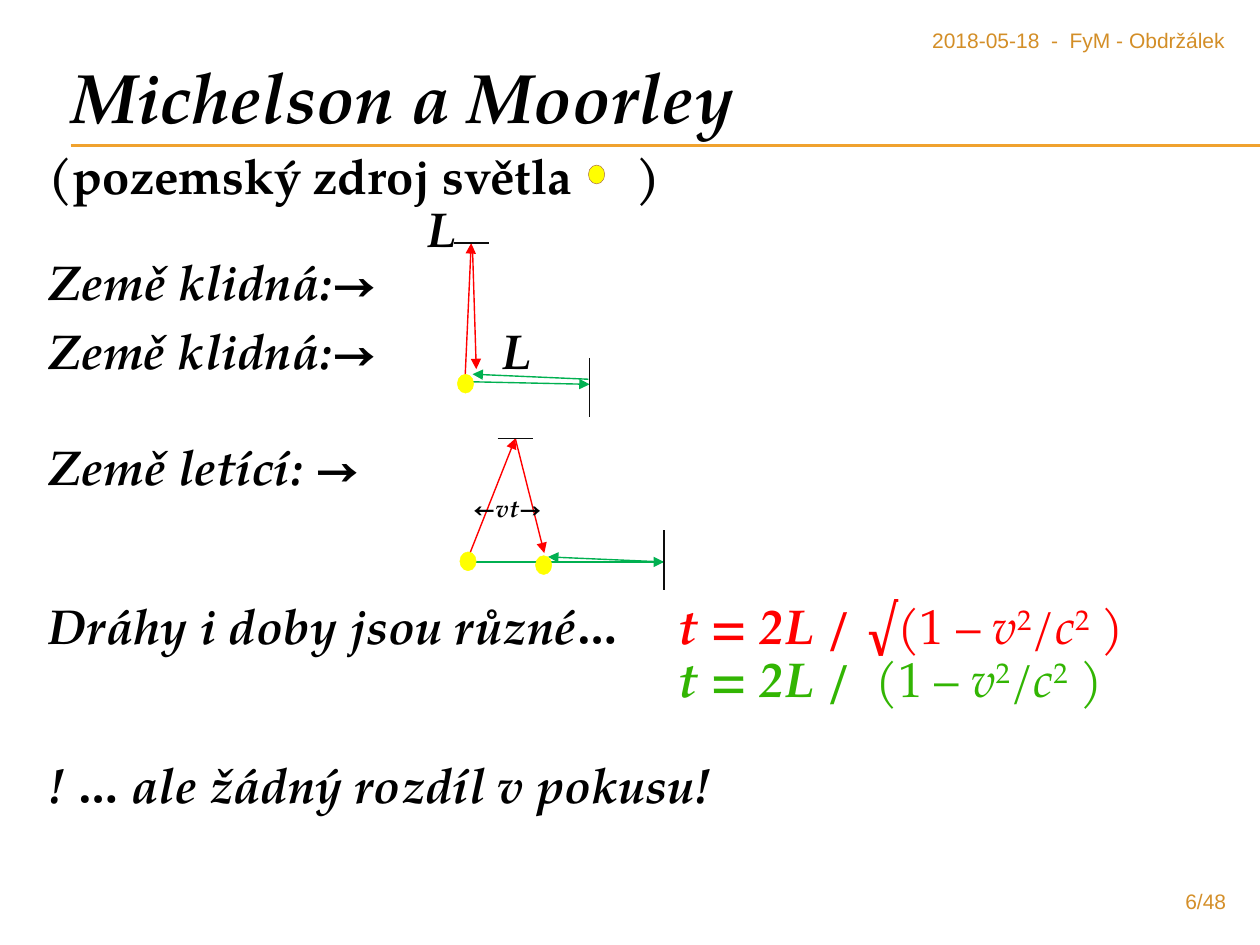
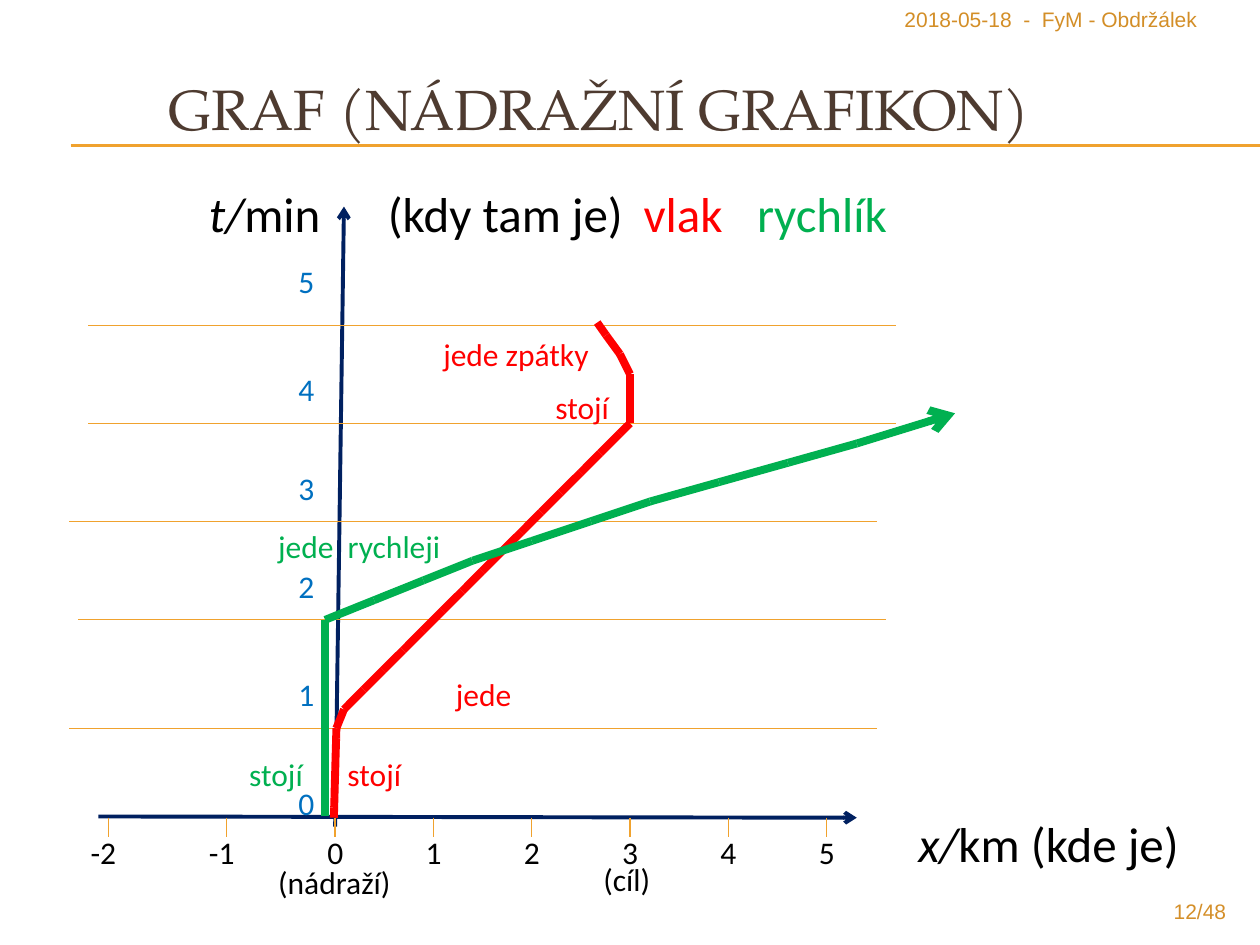
from dataclasses import dataclass

from lxml import etree
from pptx import Presentation
from pptx.dml.color import RGBColor
from pptx.enum import shapes, text
from pptx.oxml import ns
from pptx.util import Inches, Pt


@dataclass(frozen=True)
class Theme:
    serif: str = "TeX Gyre Pagella"
    sans: str = "Calibri"
    small: str = "Arial"
    black: str = "000000"
    mirror: str = "0D0D0D"
    red: str = "FF0000"
    green: str = "00B050"
    lime: str = "32B503"
    yellow: str = "FFFF00"
    brown: str = "A5644E"
    gold: str = "F0A22E"
    date: str = "D38E27"
    page: str = "D48F29"
    head: str = "4E3B30"
    navy: str = "002060"
    blue: str = "0070C0"
    title: float = 40
    caps: float = 32.4
    body: float = 28
    label: float = 18
    note: float = 14
    foot: float = 12
    thin: float = 0.79
    grid: float = 0.5
    axis: float = 2.25
    track: float = 4.5


T = Theme()


# Text
def add_run(para, words, fmt):
    run = para.add_run()
    run.text = words
    for key, value in fmt.items():
        if key == "color":
            run.font.color.rgb = RGBColor.from_string(value)
        elif key == "base":
            run._r.get_or_add_rPr().set("baseline", str(value * 1000))
        else:
            setattr(run.font, key, Pt(value) if key == "size" else value)


def add_tabs(para, stops):
    tabs = etree.SubElement(para._p.get_or_add_pPr(), ns.qn("a:tabLst"))
    for stop in stops:
        etree.SubElement(tabs, ns.qn("a:tab"), pos=str(Inches(stop)), algn="l")


def add_text(slide, box, paras, fmt, wrap=True):
    """Each para is a pair: a list of (words, format) runs, and layout options."""
    frame = slide.shapes.add_textbox(*map(Inches, box)).text_frame
    frame.word_wrap = wrap
    for i, (runs, opts) in enumerate(paras):
        para = frame.add_paragraph() if i else frame.paragraphs[0]
        para.alignment = opts.get("align", text.PP_ALIGN.LEFT)
        para.line_spacing = opts.get("lead", 1.0)
        para.space_before = Pt(opts.get("before", 0))
        if "left" in opts:
            para._p.get_or_add_pPr().set("marL", str(Inches(opts["left"])))
        if "tabs" in opts:
            add_tabs(para, opts["tabs"])
        for words, extra in runs:
            add_run(para, words, {**fmt, **extra})


def add_label(slide, left, top, width, words, color=T.black):
    fmt = dict(name=T.sans, size=T.label, color=color)
    add_text(slide, (left, top, width, 0.4), [([(words, {})], {})], fmt, False)


# Lines and dots
def add_line(slide, start, end, color, width=T.thin, tip=None):
    line = slide.shapes.add_connector(
        shapes.MSO_CONNECTOR.STRAIGHT, *map(Inches, (*start, *end)))
    line.line.color.rgb = RGBColor.from_string(color)
    line.line.width = Pt(width)
    if tip:
        etree.SubElement(line.line._get_or_add_ln(), ns.qn("a:tailEnd"), type=tip)
    etree.SubElement(line._element.spPr, ns.qn("a:effectLst"))


def add_path(slide, start, legs, color, tip=None):
    """Draw each leg (x, y, steps) as equal straight steps."""
    for x, y, steps in legs:
        dx, dy = (x - start[0]) / steps, (y - start[1]) / steps
        for i in range(steps):
            a = (start[0] + i * dx, start[1] + i * dy)
            last = (x, y, steps) == legs[-1] and i == steps - 1
            add_line(slide, a, (a[0] + dx, a[1] + dy), color, T.track,
                     tip if last else None)
        start = (x, y)


def add_lamp(slide, left, top, edge=T.yellow):
    lamp = slide.shapes.add_shape(
        shapes.MSO_SHAPE.OVAL, *map(Inches, (left, top, 0.13, 0.15)))
    lamp.shadow.inherit = False
    lamp.fill.solid()
    lamp.fill.fore_color.rgb = RGBColor.from_string(T.yellow)
    lamp.line.color.rgb = RGBColor.from_string(edge)
    lamp.line.width = Pt(0.25)


# Shared frame: double rule, date and page number
def add_base(deck, date, page, num):
    slide = deck.slides.add_slide(deck.slide_layouts[6])
    for y in (1.15, 1.16):
        add_line(slide, (0.56, y), (10, y), T.gold, 0.75)
    fmt = dict(name=T.small, size=T.foot)
    add_text(slide, (*date, 2.88, 0.32),
             [([("2018-05-18  -  FyM - Obdržálek", {})], {})],
             {**fmt, "color": T.date})
    add_text(slide, (9, page, 0.83, 0.27),
             [([(num, {})], dict(align=text.PP_ALIGN.RIGHT))],
             {**fmt, "color": T.page})
    return slide


def formula(lead, color, root):
    hue = dict(color=color)
    plain = dict(color=color, bold=False, italic=False)
    slant = {**plain, "italic": True}
    power = {**plain, "base": 30}
    return [(lead, hue), (root, plain), ("v", slant), ("2", power),
            ("/", plain), ("c", slant), ("2", power), (" )", plain)]


# Slide with the light paths
def add_light(deck):
    slide = add_base(deck, (7.3, 0.17), 7, "6/48")
    fmt = dict(name=T.serif, size=T.body, color=T.black, bold=True, italic=True)
    tight = dict(lead=0.9)
    add_text(slide, (0.47, 0.45, 5.5, 0.71),
             [([("Michelson a Moorley", dict(size=T.title))], tight)], fmt, False)

    rays = [
        ((3.69, 3.03), (3.74, 1.93), T.red), ((3.75, 1.97), (3.78, 2.93), T.red),
        ((3.74, 3.03), (4.68, 3.05), T.green), ((4.67, 3.01), (3.75, 2.97), T.green),
        ((4.09, 3.48), (4.32, 4.39), T.red), ((5.27, 4.46), (4.35, 4.42), T.green),
        ((3.73, 4.39), (4.09, 3.48), T.red), ((3.69, 4.46), (5.27, 4.46), T.green),
    ]
    for start, end, color in rays:
        add_line(slide, start, end, color, tip="triangle")
    for x, y in ((3.6, 1.93), (3.95, 3.48)):
        add_line(slide, (x, y), (x + 0.28, y), T.mirror)
    for x, y in ((4.68, 2.84), (5.27, 4.21)):
        add_line(slide, (x, y), (x, y + 0.47), T.mirror)

    up = dict(italic=False)
    note = dict(size=T.note)
    row = 30.3  # height of one body line in points
    add_text(slide, (0.29, 1.16, 9.39, 5.4), [
        ([("(pozemský zdroj světla\t)", up)], {**tight, "tabs": [4.66]}),
        ([("L", {})], {**tight, "left": 3}),
        ([("Země klidná:→", {})], tight),
        ([("Země letící: →", {})], {**tight, "before": 2.5 * row}),
        ([("←", {**note, **up}), ("vt→", note)], {**tight, "left": 3.36}),
        ([("Dráhy i doby jsou různé…\t", {}), *formula("t = 2L /", T.red, " √(1 – ")],
         {**tight, "before": 1.5 * row, "tabs": [5]}),
        (formula("t = 2L / ", T.lime, " (1 – "), {**tight, "left": 5}),
        ([("! … ale žádný rozdíl v pokusu!", {})], {**tight, "before": row}),
    ], fmt)
    add_text(slide, (0.29, 2.55, 4.13, 0.53),
             [([("Země klidná:→\tL", {})], {**tight, "tabs": [3.59]})], fmt)

    for spot in ((3.63, 2.97), (3.65, 4.38), (4.25, 4.41)):
        add_lamp(slide, *spot)
    add_lamp(slide, 4.67, 1.31, T.brown)


# Slide with the train graph
def add_graph(deck):
    slide = add_base(deck, (7.08, 0), 7.08, "12/48")
    add_text(slide, (1.24, 0.54, 8.5, 0.55),
             [([("GRAF (NÁDRAŽNÍ GRAFIKON)", {})], {})],
             dict(name=T.serif, size=T.caps, color=T.head))

    # Axes and their names
    add_line(slide, (0.78, 6.48), (6.8, 6.49), T.navy, T.axis, "arrow")
    add_line(slide, (2.66, 6.56), (2.73, 1.64), T.navy, T.axis, "arrow")
    fmt = dict(name=T.sans, size=T.body, color=T.black)
    slant = dict(italic=True)
    add_text(slide, (7.19, 6.41, 2.34, 0.57),
             [([("x/", slant), ("km (kde je)", {})], {})], fmt)
    add_text(slide, (1.56, 1.41, 6.02, 0.57),
             [([("t/", slant), ("min\t(kdy tam je)\t", {}),
                ("vlak\t", dict(color=T.red)), ("rychlík", dict(color=T.green))],
               dict(tabs=[1.42, 3.45, 4.35]))], fmt)

    # Kilometre ticks
    ticks = [0.86, 1.8] + [2.66 + 0.78 * i for i in range(6)]
    for km, x in enumerate(ticks, -2):
        add_line(slide, (x, 6.49), (x, 6.64), T.gold)
        shift, width = (0.24, 0.41) if km < 0 else (0.16, 0.33)
        add_label(slide, x - shift, 6.56, width, str(km))
    add_label(slide, 2.11, 6.8, 1.1, "(nádraží)")
    add_label(slide, 4.69, 6.78, 0.58, "(cíl)")

    # Minute grid
    for x, y in ((0.55, 5.78), (0.62, 4.92), (0.55, 4.14), (0.7, 3.36), (0.7, 2.58)):
        add_line(slide, (x, y), (x + 6.41, y), T.gold, T.grid)
    for minute, y in enumerate((6.17, 5.31, 4.45, 3.67, 2.89, 2.03)):
        add_label(slide, 2.27, y, 0.33, str(minute), T.blue)

    # Train and express
    add_path(slide, (2.65, 6.49), [
        (2.67, 5.78, 9), (2.73, 5.63, 1), (4.92, 3.44, 14), (5, 3.36, 1),
        (5, 3.12, 1), (5, 2.97, 1), (4.92, 2.81, 1), (4.81, 2.66, 1),
        (4.74, 2.56, 1)], T.red)
    add_path(slide, (2.58, 6.48), [
        (2.58, 5.78, 9), (2.58, 5, 5), (2.58, 4.92, 1), (3.75, 4.45, 3),
        (5.16, 3.98, 3), (6.8, 3.52, 3), (7.58, 3.28, 1)], T.green, "arrow")

    for left, top, width, words, color in (
            (2.66, 5.94, 0.63, "stojí", T.red), (3.52, 5.31, 0.65, "jede", T.red),
            (4.31, 3.03, 0.63, "stojí", T.red),
            (3.42, 2.61, 1.37, "jede zpátky", T.red),
            (1.88, 5.94, 0.63, "stojí", T.green),
            (2.11, 4.13, 1.56, "jede  rychleji", T.green)):
        add_label(slide, left, top, width, words, color)


def main():
    deck = Presentation()
    deck.slide_width, deck.slide_height = Inches(10), Inches(7.5)
    add_light(deck)
    add_graph(deck)
    deck.save("out.pptx")


if __name__ == "__main__":
    main()
